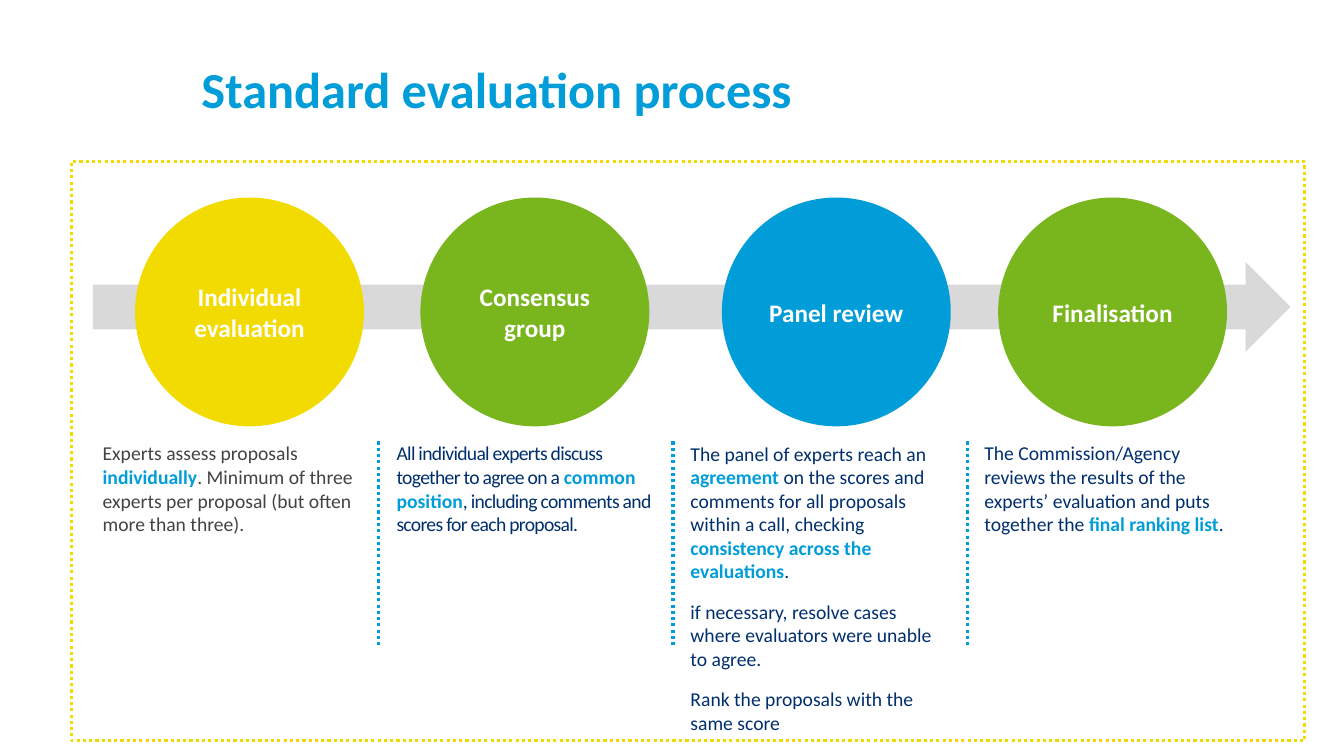
"""Build the slide on the four steps of the standard evaluation process."""
from lxml.etree import SubElement
from pptx import Presentation
from pptx.dml.color import RGBColor
from pptx.enum.dml import MSO_LINE
from pptx.enum.shapes import MSO_CONNECTOR, MSO_SHAPE
from pptx.enum.text import MSO_ANCHOR, PP_ALIGN
from pptx.oxml.ns import qn
from pptx.util import Inches, Pt

BLUE, NAVY, GREY, YELLOW, GREEN = "009DD9", "002F6E", "444342", "F2DB00", "79B51D"
COLUMN_LEFT, COLUMN_STEP, COLUMN_WIDTH, COLUMN_TOP = 0.92, 2.915, 2.76, 4.33
CIRCLE_TOP, CIRCLE_SIZE = 1.96, 2.27
DIVIDER_LEFT, DIVIDER_STEP = 3.75, 2.925

STEPS = [
    dict(name="Individual evaluation", left=1.34, fill=YELLOW, ink=GREY, spacing=0, height=2.2, after=6,
         texts=["Experts assess proposals *individually*. Minimum of three experts per proposal "
                "(but often more than three)."]),
    dict(name="Consensus group", left=4.17, fill=GREEN, ink=NAVY, spacing=-50, height=2.56, after=0,
         texts=["All individual experts discuss together to agree on a *common position*, "
                "including comments and scores for each proposal."]),
    dict(name="Panel review", left=7.16, fill=BLUE, ink=NAVY, spacing=0, height=3.02, after=6,
         texts=["The panel of experts reach an *agreement* on the scores and comments for all proposals "
                "within a call, checking *consistency across the evaluations*.",
                "if necessary, resolve cases where evaluators were unable to agree.",
                "Rank the proposals with the same score"]),
    dict(name="Finalisation", left=9.9, fill=GREEN, ink=NAVY, spacing=0, height=2.56, after=12,
         texts=["The Commission/Agency reviews the results of the experts’ evaluation and puts together "
                "the *final ranking list*."]),
]


def paint(target, color):
    """Give a fill, line or font a solid colour."""
    if hasattr(target, "solid"):
        target.solid()
        target.fore_color.rgb = RGBColor.from_string(color)
    else:
        target.color.rgb = RGBColor.from_string(color)


def write(para, text, size, ink, accent=BLUE, spacing=0):
    """Add text to a paragraph, with the parts between asterisks bold in the accent colour."""
    for index, part in enumerate(text.split("*")):
        if not part:
            continue
        strong = index % 2 == 1
        span = para.add_run()
        span.text = part
        for name, value in dict(name="Calibri", size=Pt(size), bold=strong).items():
            setattr(span.font, name, value)
        paint(span.font, accent if strong else ink)
        if spacing and not strong:
            span.font._element.set("spc", str(spacing))


deck = Presentation()
deck.slide_width, deck.slide_height = Inches(13.33), Inches(7.5)
page = deck.slides.add_slide(deck.slide_layouts[6])

arrow = page.shapes.add_shape(MSO_SHAPE.RIGHT_ARROW, Inches(COLUMN_LEFT), Inches(2.6), Inches(11.88), Inches(0.89))
arrow.shadow.inherit = False
paint(arrow.fill, "D9D9D9")
arrow.line.fill.background()

for column, step in enumerate(STEPS):
    circle = page.shapes.add_shape(MSO_SHAPE.OVAL, Inches(step["left"]), Inches(CIRCLE_TOP),
                                   Inches(CIRCLE_SIZE), Inches(CIRCLE_SIZE))
    circle.shadow.inherit = False
    paint(circle.fill, step["fill"])
    circle.line.fill.background()
    circle.text_frame.vertical_anchor = MSO_ANCHOR.MIDDLE
    circle.text_frame.word_wrap = True
    label = circle.text_frame.paragraphs[0]
    label.alignment = PP_ALIGN.CENTER
    write(label, f"*{step['name']}*", 18, "FFFFFF", accent="FFFFFF")

    box = page.shapes.add_textbox(Inches(COLUMN_LEFT + column * COLUMN_STEP), Inches(COLUMN_TOP),
                                  Inches(COLUMN_WIDTH), Inches(step["height"]))
    box.text_frame.word_wrap = True
    for row, text in enumerate(step["texts"]):
        para = box.text_frame.add_paragraph() if row else box.text_frame.paragraphs[0]
        para.space_before = Pt(6 if row else 0)
        para.space_after = Pt(step["after"])
        write(para, text, 14, step["ink"], spacing=step["spacing"])

dotted = []
for gap in range(len(STEPS) - 1):
    middle = Inches(DIVIDER_LEFT + gap * DIVIDER_STEP)
    divider = page.shapes.add_connector(MSO_CONNECTOR.STRAIGHT, middle, Inches(4.38), middle, Inches(6.43))
    SubElement(divider._element.spPr, qn("a:effectLst"))
    dotted.append((divider, BLUE))

title = page.shapes.add_textbox(Inches(1.9), Inches(0.53), Inches(10.52), Inches(0.62))
title.text_frame.word_wrap = True
title.text_frame.margin_bottom = 0
write(title.text_frame.paragraphs[0], "*Standard evaluation process*", 36, BLUE)

frame = page.shapes.add_shape(MSO_SHAPE.RECTANGLE, Inches(0.71), Inches(1.6), Inches(12.23), Inches(5.75))
frame.shadow.inherit = False
frame.fill.background()
dotted.append((frame, YELLOW))

for shape, color in dotted:
    paint(shape.line, color)
    for name, value in dict(width=Pt(2.25), dash_style=MSO_LINE.ROUND_DOT).items():
        setattr(shape.line, name, value)

deck.save("out.pptx")
